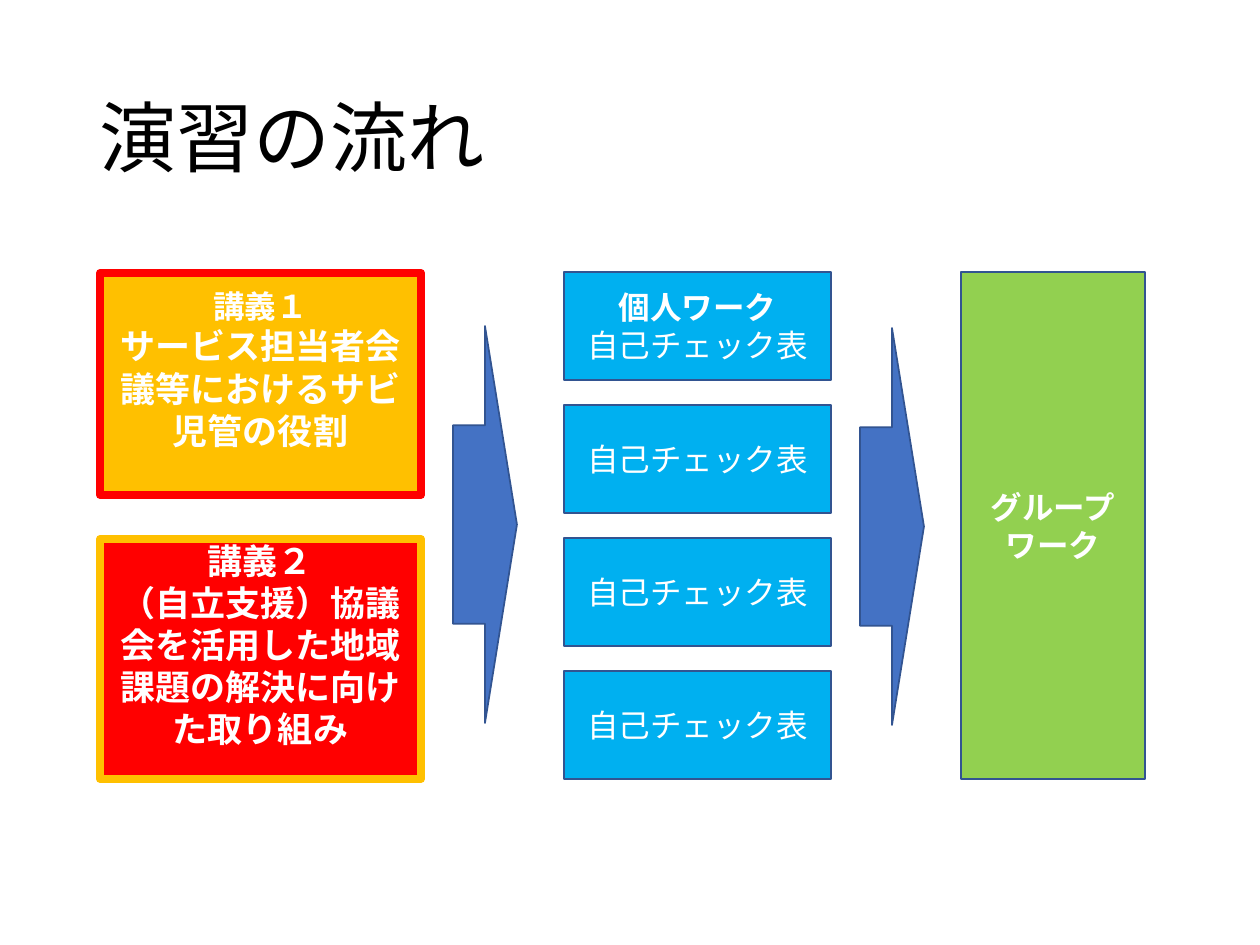
from pptx import Presentation
from pptx.dml.color import RGBColor
from pptx.enum.lang import MSO_LANGUAGE_ID
from pptx.enum.shapes import MSO_SHAPE
from pptx.enum.text import MSO_ANCHOR, PP_ALIGN
from pptx.util import Emu, Pt

RECTANGLE = MSO_SHAPE.RECTANGLE
RIGHT_ARROW = MSO_SHAPE.RIGHT_ARROW
MIDDLE = MSO_ANCHOR.MIDDLE
LEFT = PP_ALIGN.LEFT
CENTER = PP_ALIGN.CENTER
JAPANESE = MSO_LANGUAGE_ID.JAPANESE

PX_PER_INCH = 126
RED, AMBER, BLUE, GREEN = "FF0000", "FFC000", "00B0F0", "92D050"


def px(*lengths):
    return [Emu(round(length * 914400 / PX_PER_INCH)) for length in lengths]


def color(hex_value):
    return RGBColor.from_string(hex_value)


class FlowSlide:
    font = "Calibri"
    outline = "325491"
    arrow_fill = "4472C4"

    def __init__(self, slide):
        self.slide = slide

    def set_lines(self, frame, lines, text_color, align):
        frame.word_wrap = True
        frame.vertical_anchor = MIDDLE
        frame.text = "\n".join(text for text, size, bold in lines)
        for paragraph, (text, size, bold) in zip(frame.paragraphs, lines):
            paragraph.alignment = align
            for run in paragraph.runs:
                run.font.name = self.font
                run.font.size = Pt(size)
                run.font.bold = bold
                run.font.color.rgb = color(text_color)
                run.font.language_id = JAPANESE

    def title(self, text, *box):
        frame = self.slide.shapes.add_textbox(*px(*box)).text_frame
        self.set_lines(frame, [(text, 44, False)], "000000", LEFT)
        frame.paragraphs[0].line_spacing = 0.9

    def preset(self, kind, box, fill, line, line_width):
        shape = self.slide.shapes.add_shape(kind, *px(*box))
        shape.shadow.inherit = False
        shape.fill.solid()
        shape.fill.fore_color.rgb = color(fill)
        shape.line.color.rgb = color(line)
        shape.line.width = Pt(line_width)
        return shape

    def step(self, lines, box, fill, line=outline, line_width=1, bottom_inset=6):
        shape = self.preset(RECTANGLE, box, fill, line, line_width)
        self.set_lines(shape.text_frame, lines, "FFFFFF", CENTER)
        shape.text_frame.margin_bottom = px(bottom_inset)[0]

    def lecture(self, lines, box, fill, line):
        self.step(lines, box, fill, line, line_width=4.5, bottom_inset=36)

    def arrow(self, *box):
        self.preset(RIGHT_ARROW, box, self.arrow_fill, self.outline, 1)


def main():
    deck = Presentation()
    deck.slide_width, deck.slide_height = px(1260, 945)
    flow = FlowSlide(deck.slides.add_slide(deck.slide_layouts[6]))

    flow.title("演習の流れ", 87, 50, 1086, 183)

    flow.lecture(
        [("講義２", 20, True),
         ("（自立支援）協議会を活用した地域課題の解決に向けた取り組み", 20, True)],
        (100, 539, 321, 240), RED, AMBER)
    flow.lecture(
        [("講義１", 18, True),
         ("サービス担当者会議等におけるサビ児管の役割", 20, True)],
        (100, 273, 321, 222), AMBER, RED)

    flow.arrow(453, 326, 64, 397)

    check_sheet = ("自己チェック表", 18, False)
    for row in range(4):
        heading = [("個人ワーク", 18, True)] if row == 0 else []
        flow.step(heading + [check_sheet],
                  (564, 272 + 133 * row, 267, 108), BLUE)

    flow.arrow(860, 328, 64, 397)

    flow.step([("グループワーク", 18, True)], (961, 272, 184, 507), GREEN)

    deck.save("out.pptx")


if __name__ == "__main__":
    main()
